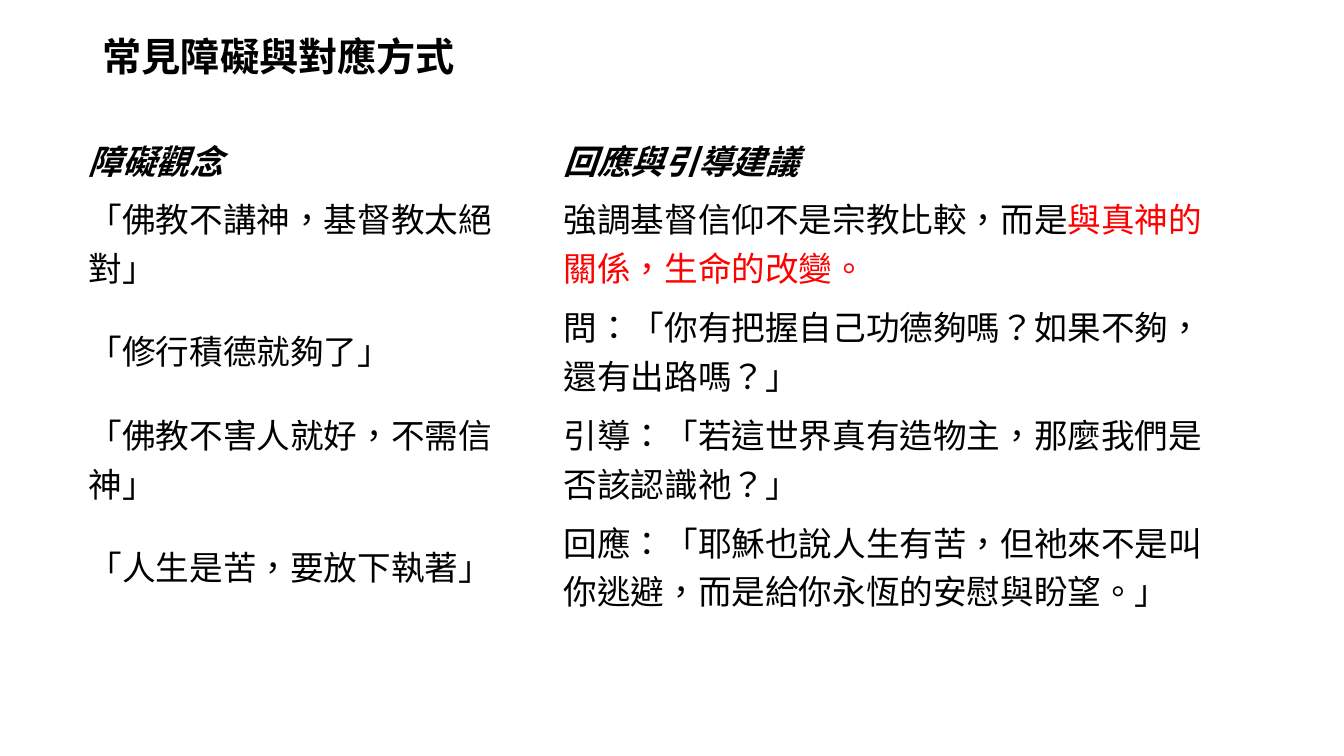
from dataclasses import dataclass

from pptx import Presentation
from pptx.dml.color import RGBColor
from pptx.enum.lang import MSO_LANGUAGE_ID
from pptx.enum.text import MSO_ANCHOR
from pptx.oxml.ns import qn
from pptx.util import Inches, Pt


@dataclass(frozen=True)
class Theme:
    font: str = "Calibri"
    ink: RGBColor = RGBColor(0, 0, 0)
    accent: RGBColor = RGBColor(255, 0, 0)
    title_size: int = 28
    body_size: int = 24
    table_style: str = "{2D5ABB26-0587-4C30-8999-92F81FD0307C}"


HEADER = ("障礙觀念", "回應與引導建議")
ROWS = [
    ("「佛教不講神，基督教太絕對」",
     ("強調基督信仰不是宗教比較，而是", "與真神的關係，生命的改變。")),
    ("「修行積德就夠了」",
     "問：「你有把握自己功德夠嗎？如果不夠，還有出路嗎？」"),
    ("「佛教不害人就好，不需信神」",
     "引導：「若這世界真有造物主，那麼我們是否該認識祂？」"),
    ("「人生是苦，要放下執著」",
     "回應：「耶穌也說人生有苦，但祂來不是叫你逃避，而是給你永恆的安慰與盼望。」"),
]


class SlideBuilder:
    """Holds the theme and the current slide, and adds styled elements to it."""

    def __init__(self, s, theme):
        self.s = s
        self.theme = theme

    def format_run(self, r, size, color=None, bold=False, italic=False):
        f = r.font
        f.name = self.theme.font
        f.size = Pt(size)
        f.bold = bold
        f.italic = italic
        f.color.rgb = color or self.theme.ink
        f.language_id = MSO_LANGUAGE_ID.TRADITIONAL_CHINESE

    def title(self, text, left, top, width, height):
        sp = self.s.shapes.add_textbox(Inches(left), Inches(top), Inches(width), Inches(height))
        tf = sp.text_frame
        tf.word_wrap = True
        tf.vertical_anchor = MSO_ANCHOR.MIDDLE
        tf.text = text
        p = tf.paragraphs[0]
        p.line_spacing = 0.9
        self.format_run(p.runs[0], self.theme.title_size, bold=True)

    def cell(self, cell, content, header):
        plain, *accents = (content,) if isinstance(content, str) else content
        cell.fill.background()
        cell.vertical_anchor = MSO_ANCHOR.MIDDLE
        p = cell.text_frame.paragraphs[0]
        p.text = plain
        self.format_run(p.runs[0], self.theme.body_size, bold=header, italic=header)
        for text in accents:
            r = p.add_run()
            r.text = text
            self.format_run(r, self.theme.body_size, self.theme.accent)

    def table(self, rows, left, top, widths, header_height, row_height):
        height = header_height + row_height * (len(rows) - 1)
        frame = self.s.shapes.add_table(
            len(rows), len(widths), Inches(left), Inches(top), Inches(sum(widths)), Inches(height))
        table = frame.table
        table.first_row = False
        table.horz_banding = False
        next(frame.element.iter(qn("a:tableStyleId"))).text = self.theme.table_style
        for column, width in zip(table.columns, widths):
            column.width = Inches(width)
        for i, contents in enumerate(rows):
            table.rows[i].height = Inches(row_height if i else header_height)
            for j, content in enumerate(contents):
                self.cell(table.cell(i, j), content, header=i == 0)


def main():
    prs = Presentation()
    prs.slide_width, prs.slide_height = Inches(13.33), Inches(7.5)
    builder = SlideBuilder(prs.slides.add_slide(prs.slide_layouts[6]), Theme())
    builder.title("常見障礙與對應方式", 0.92, 0.19, 11.5, 0.79)
    builder.table([HEADER, *ROWS], 0.78, 1.29, (4.71, 6.79), 0.58, 1.07)
    prs.save("out.pptx")


if __name__ == "__main__":
    main()
